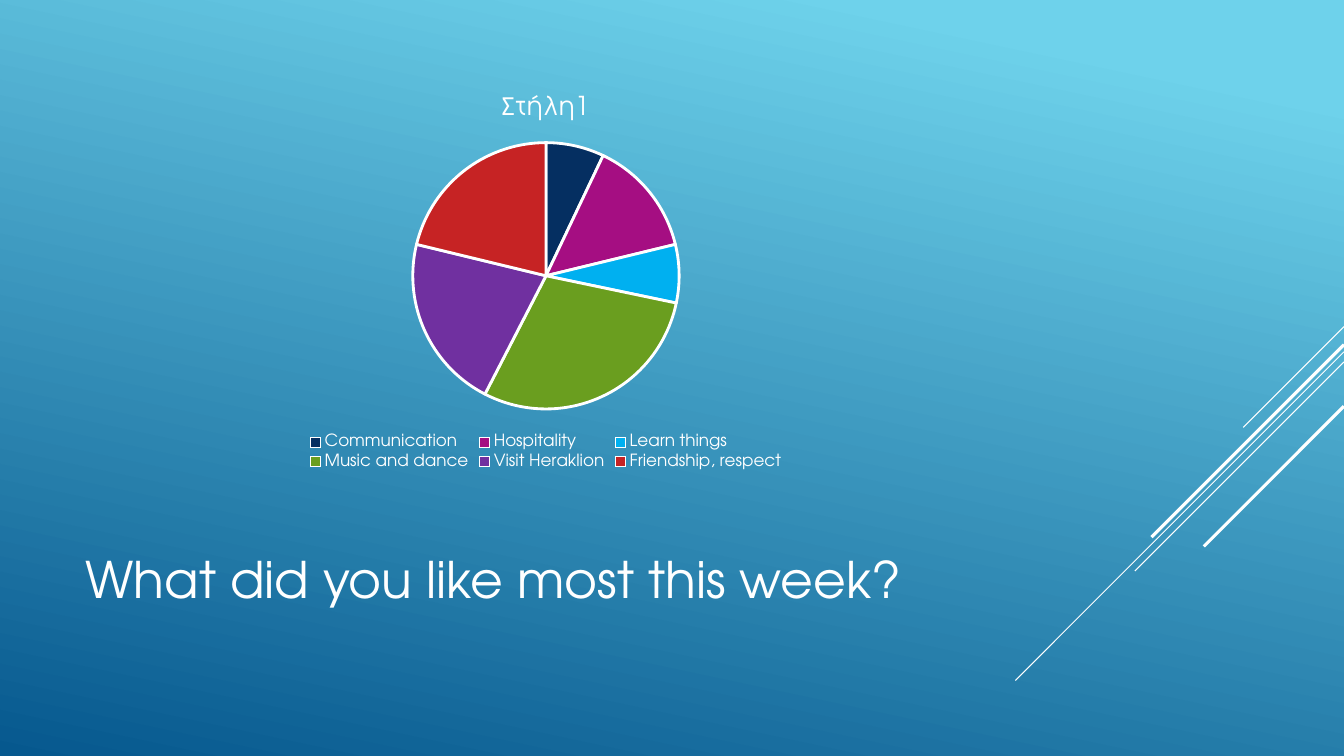
from lxml import etree
from pptx import Presentation
from pptx import util as u
from pptx.chart import data as chart_data
from pptx.dml import color
from pptx.enum import chart as ch, shapes, text
from pptx.oxml import ns

SLIDE_WIDTH, SLIDE_HEIGHT = 960, 540
CONTENT_LEFT, CONTENT_WIDTH = 54, 672
ANSWERS = [
    ("Communication", 7, "052F61"),
    ("Hospitality", 14, "A50E82"),
    ("Learn things", 7, "00B0F0"),
    ("Music and dance", 29, "6A9E1F"),
    ("Visit Heraklion", 21, "7030A0"),
    ("Friendship, respect", 21, "C62324"),
]
DIAGONALS = [
    (233.3, 72, 0.75),
    (251.3, 234.7, 0.75),
    (258.5, 149.4, 0.75),
    (246.2, 137.5, 2.25),
    (290.2, 100.1, 2.25),
]


def rgb(value):
    return color.RGBColor.from_string(value)


class SurveySlide:
    font_name = "TeX Gyre Adventor"
    ink = "FFFFFF"

    def __init__(self, presentation):
        self.slide = presentation.slides.add_slide(presentation.slide_layouts[6])

    def style(self, font, size):
        font.name = self.font_name
        font.size = u.Pt(size)
        font.bold = False
        font.color.rgb = rgb(self.ink)

    def background(self, stops, clockwise_angle):
        fill = self.slide.background.fill
        fill.gradient()
        fill.gradient_angle = 360 - clockwise_angle
        for stop, (position, value) in zip(fill.gradient_stops, stops):
            stop.position = position
            stop.color.rgb = rgb(value)

    def diagonal(self, top, reach, weight):
        stripe = self.slide.shapes.add_connector(
            shapes.MSO_CONNECTOR.STRAIGHT,
            u.Pt(SLIDE_WIDTH), u.Pt(top),
            u.Pt(SLIDE_WIDTH - reach), u.Pt(top + reach),
        )
        stripe.line.color.rgb = rgb(self.ink)
        stripe.line.width = u.Pt(weight)
        etree.SubElement(stripe._element.spPr, ns.qn("a:effectLst"))

    def heading(self, wording, top, height, size):
        box = self.slide.shapes.add_textbox(
            u.Pt(CONTENT_LEFT), u.Pt(top), u.Pt(CONTENT_WIDTH), u.Pt(height)
        )
        frame = box.text_frame
        frame.word_wrap = True
        frame.vertical_anchor = text.MSO_ANCHOR.MIDDLE
        frame.text = wording
        self.style(frame.paragraphs[0].runs[0].font, size)

    def pie(self, series_name, answers, top, height):
        data = chart_data.CategoryChartData()
        data.categories = [label for label, _, _ in answers]
        data.add_series(series_name, [share for _, share, _ in answers])
        chart = self.slide.shapes.add_chart(
            ch.XL_CHART_TYPE.PIE,
            u.Pt(CONTENT_LEFT), u.Pt(top), u.Pt(CONTENT_WIDTH), u.Pt(height), data,
        ).chart
        self.style(chart.font, 10)

        chart.has_title = True
        chart.chart_title.include_in_layout = False
        title = chart.chart_title.text_frame
        title.text = series_name
        self.style(title.paragraphs[0].runs[0].font, 18.6)

        chart.has_legend = True
        chart.legend.position = ch.XL_LEGEND_POSITION.BOTTOM
        chart.legend.include_in_layout = False
        self.style(chart.legend.font, 12)

        plot = chart.plots[0]
        plot.vary_by_categories = True
        for index, (_, _, value) in enumerate(answers):
            slice_format = plot.series[0].points[index].format
            slice_format.fill.solid()
            slice_format.fill.fore_color.rgb = rgb(value)
            slice_format.line.color.rgb = rgb(self.ink)
            slice_format.line.width = u.Pt(2)


def main():
    presentation = Presentation()
    presentation.slide_width = u.Pt(SLIDE_WIDTH)
    presentation.slide_height = u.Pt(SLIDE_HEIGHT)
    survey = SurveySlide(presentation)
    survey.background([(0.1, "6ED2EB"), (1, "06588E")], 102)
    for top, reach, weight in DIAGONALS:
        survey.diagonal(top, reach, weight)
    survey.heading("What did you like most this week?", 353.5, 118.8, 36)
    survey.pie("Στήλη1", ANSWERS, 54, 284.4)
    presentation.save("out.pptx")


if __name__ == "__main__":
    main()
